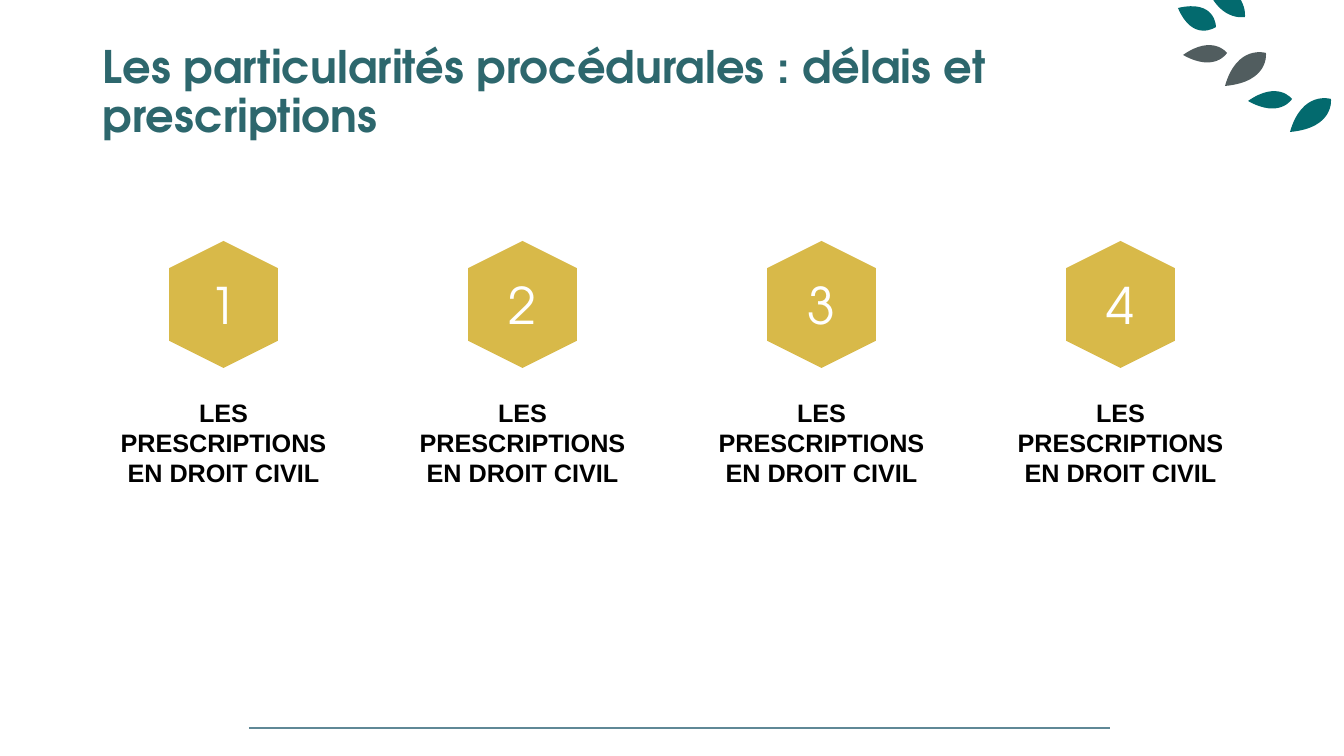
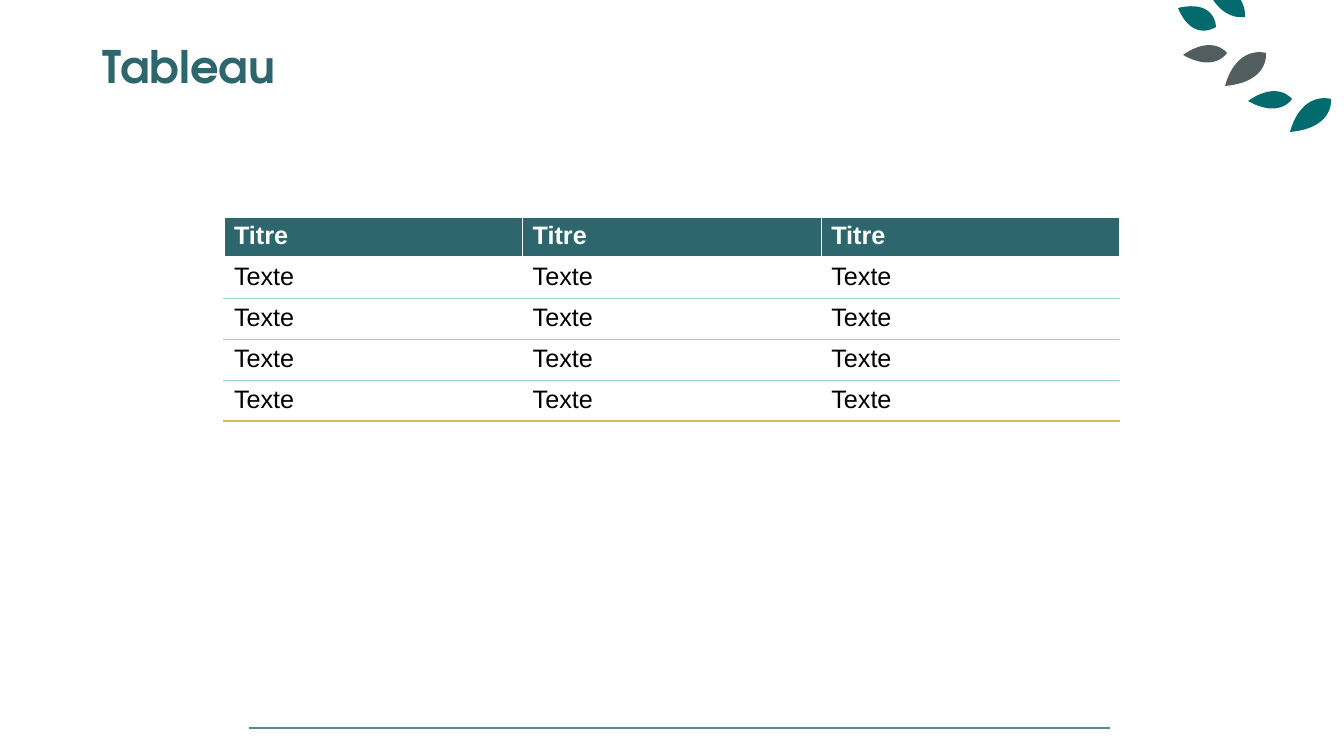
from lxml import etree
from pptx import Presentation
from pptx.dml.color import RGBColor
from pptx.enum.shapes import MSO_CONNECTOR, MSO_SHAPE
from pptx.enum.text import MSO_ANCHOR, MSO_AUTO_SIZE, PP_ALIGN
from pptx.oxml.ns import qn
from pptx.util import Emu, Pt

PX = 914400 / 100.8
STRAIGHT = MSO_CONNECTOR.STRAIGHT
HEXAGON = MSO_SHAPE.HEXAGON
CENTER, LEFT = PP_ALIGN.CENTER, PP_ALIGN.LEFT
MIDDLE = MSO_ANCHOR.MIDDLE
GROW = MSO_AUTO_SIZE.SHAPE_TO_FIT_TEXT

HEAD, BODY = "TeX Gyre Adventor", "Arial"
COLORS = {
    "title": "2D676D", "leaf": "036A6E", "grey": "515D5F", "gold": "D8B949",
    "rule": "5F8896", "mint": "9AD0D5", "white": "FFFFFF", "black": "000000",
}

# Content
STEPS_TITLE = "Les particularités procédurales : délais et prescriptions"
STEPS = ["LES PRESCRIPTIONS EN DROIT CIVIL"] * 4
TABLE_TITLE = "Tableau"
ROWS = [["Titre"] * 3] + [["Texte"] * 3 for _ in range(4)]
# Horizontal table lines from top to bottom: colour, points
RULES = [("white", 1), ("white", 3), ("mint", 0.5), ("mint", 0.5),
         ("mint", 0.5), ("gold", 2.25)]

# Leaves: stem, lower bend, tip, upper bend
TWIG = [
    [(1248, 101), (1280, 119), (1292, 99), (1278, 80)],
    [(1290, 132), (1335, 128), (1331, 99), (1302, 90)],
]
TOP = [
    [(1204, -22), (1216, 23), (1245, 17), (1249, -13)],
    [(1178, 8), (1193, 43), (1216, 27), (1216, -1)],
]
# Groups of leaves: leaves, shift, colour
SPRAY = [(TWIG, (0, 0), "leaf"), (TOP, (0, 0), "leaf"), (TWIG, (-65, -46), "grey")]


def px(*vals):
    return [Emu(round(v * PX)) for v in vals]


def rgb(name):
    return RGBColor.from_string(COLORS[name])


def paint(shape, color):
    shape.shadow.inherit = False
    shape.fill.solid()
    shape.fill.fore_color.rgb = rgb(color)
    shape.line.fill.background()


def write(frame, text, size, face, color, bold=False, align=LEFT):
    frame.text = text
    para = frame.paragraphs[0]
    para.alignment = align
    font = para.runs[0].font
    font.size, font.name, font.bold = Pt(size), face, bold
    font.color.rgb = rgb(color)
    return para


def add_text(slide, box, *style):
    frame = slide.shapes.add_textbox(*px(*box)).text_frame
    frame.word_wrap = True
    return frame, write(frame, *style)


def trace(a, b, c, d, steps=16):
    """Points along a cubic curve, used to measure it."""
    for i in range(1, steps + 1):
        t = i / steps
        u = 1 - t
        yield tuple(u**3 * p + 3 * u * u * t * q + 3 * u * t * t * r + t**3 * s
                    for p, q, r, s in zip(a, b, c, d))


def add_leaf(group, leaf, shift, color):
    stem, low, tip, high = [(x + shift[0], y + shift[1]) for x, y in leaf]
    sides = [(stem, low, tip, tip), (tip, tip, high, stem)]
    # The traced outline sets the size
    form = group.shapes.build_freeform(*px(*stem))
    form.add_line_segments([px(*dot) for side in sides for dot in trace(*side)])
    shape = form.convert_to_shape()
    paint(shape, color)
    # Two true curves replace it
    outline = shape.element.find(".//" + qn("a:path"))
    for line in outline.findall(qn("a:lnTo")):
        outline.remove(line)
    close = outline.find(qn("a:close"))
    if close is not None:
        outline.remove(close)
    for side in sides:
        bend = etree.SubElement(outline, qn("a:cubicBezTo"))
        for dot in side[1:]:
            x, y = px(*dot)
            etree.SubElement(bend, qn("a:pt"), x=str(x - shape.left),
                             y=str(y - shape.top))
    etree.SubElement(outline, qn("a:close"))


def dress(layout, slide):
    """Draw the shared parts, then move them to the layout."""
    for holder in list(layout.placeholders):
        holder.element.getparent().remove(holder.element)
    # Footer rule
    rule = slide.shapes.add_connector(STRAIGHT, *px(249, 728, 1110, 728))
    rule.line.color.rgb = rgb("rule")
    rule.line.width = Pt(1.5)
    etree.SubElement(rule.element.spPr, qn("a:effectLst"))
    # Corner leaves
    group = slide.shapes.add_group_shape()
    for leaves, shift, color in SPRAY:
        for leaf in leaves:
            add_leaf(group, leaf, shift, color)
    for part in (rule, group):
        layout.element.cSld.spTree.append(part.element)


def add_title(slide, title):
    para = add_text(slide, (93, 40, 1027, 102), title, 32, HEAD, "title", True)[1]
    para.line_spacing = 0.9


def add_steps(slide):
    left, pitch, wide = 93, 299, 261
    hex_w, hex_h = 127, 109
    for i, text in enumerate(STEPS):
        x = left + i * pitch
        # Numbered hexagon, turned with upright text
        box = px(x + (wide - hex_w) // 2, 250, hex_w, hex_h)
        badge = slide.shapes.add_shape(HEXAGON, *box)
        badge.rotation = 90
        paint(badge, "gold")
        frame = badge.text_frame
        frame.vertical_anchor = MIDDLE
        write(frame, str(i + 1), 36, HEAD, "white", False, CENTER)
        badge.element.find(".//" + qn("a:bodyPr")).set("vert", "vert270")
        # Caption
        frame = add_text(slide, (x, 392, wide, 72), text, 18, BODY, "black",
                         True, CENTER)[0]
        frame.auto_size = GROW


def set_edges(cell, edges):
    props = cell._tc.get_or_add_tcPr()
    for i, (side, (color, width)) in enumerate(edges.items()):
        line = etree.Element(qn("a:ln" + side), w=str(Pt(width)))
        fill = etree.SubElement(line, qn("a:solidFill"))
        etree.SubElement(fill, qn("a:srgbClr"), val=COLORS[color])
        props.insert(i, line)


def add_grid(slide):
    box = px(224, 217, 896, 204)
    grid = slide.shapes.add_table(len(ROWS), len(ROWS[0]), *box).table
    grid.horz_banding = False
    for r, row in enumerate(ROWS):
        head = r == 0
        for c, text in enumerate(row):
            cell = grid.cell(r, c)
            write(cell.text_frame, text, 18, BODY, "white" if head else "black", head)
            if head:
                cell.fill.solid()
                cell.fill.fore_color.rgb = rgb("title")
            else:
                cell.fill.background()
            set_edges(cell, {"L": ("white", 1), "R": ("white", 1),
                             "T": RULES[r], "B": RULES[r + 1]})


def main():
    deck = Presentation()
    deck.slide_width, deck.slide_height = px(1344, 756)
    blank = deck.slide_layouts[6]
    steps, grid = [deck.slides.add_slide(blank) for _ in range(2)]
    dress(blank, steps)
    add_title(steps, STEPS_TITLE)
    add_steps(steps)
    add_title(grid, TABLE_TITLE)
    add_grid(grid)
    deck.save("out.pptx")


if __name__ == "__main__":
    main()
